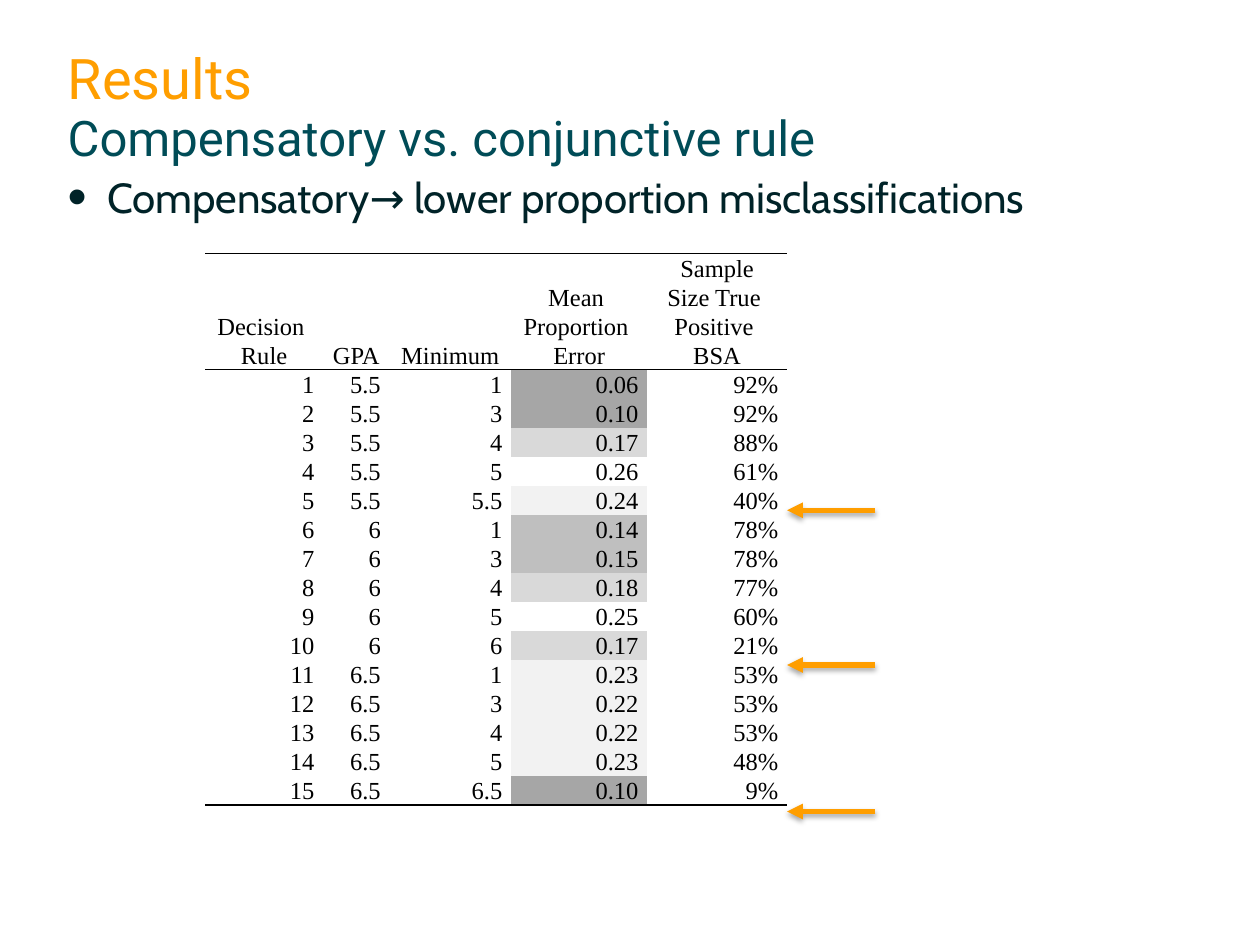
from lxml.etree import SubElement
from pptx import Presentation
from pptx.dml.color import RGBColor
from pptx.enum.shapes import MSO_CONNECTOR
from pptx.enum.text import MSO_ANCHOR, MSO_AUTO_SIZE, PP_ALIGN
from pptx.oxml import parse_xml
from pptx.oxml.ns import nsdecls, qn
from pptx.util import Pt


def rgb(color):
    return RGBColor.from_string(color)


def add_text(p, text, font="Times New Roman", size=14, color="000000",
             align=None, spacing=None):
    p.alignment = align
    p.line_spacing = spacing
    p.space_before = Pt(0)
    r = p.add_run()
    r.text = text
    r.font.name = font
    r.font.size = Pt(size)
    r.font.color.rgb = rgb(color)


prs = Presentation()
prs.slide_width, prs.slide_height = Pt(720), Pt(540)
s = prs.slides.add_slide(prs.slide_layouts[1])
title, body = s.placeholders

# Placeholder frames
for sp, top, height in ((title, 31, 65.5), (body, 102, 368.6)):
    sp.left, sp.top, sp.width, sp.height = Pt(38.7), Pt(top), Pt(643.7), Pt(height)
    tf = sp.text_frame
    tf.word_wrap = True
    tf.auto_size = MSO_AUTO_SIZE.NONE
    tf.vertical_anchor = MSO_ANCHOR.TOP
    tf.margin_left = tf.margin_top = tf.margin_right = tf.margin_bottom = 0

# Title and subtitle
p = title.text_frame.paragraphs[0]
title_format = dict(font="Roboto", align=PP_ALIGN.LEFT, spacing=Pt(32))
add_text(p, "Results", size=32, color="FF9E00", **title_format)
p.add_line_break()
add_text(p, "Compensatory vs. conjunctive rule", size=28, color="004C57", **title_format)

# Bullet
p = body.text_frame.paragraphs[0]
pPr = p._p.get_or_add_pPr()
pPr.set("marL", str(Pt(22.5)))
pPr.set("indent", str(-Pt(22.5)))
SubElement(pPr, qn("a:buSzPct"), val="130000")
SubElement(pPr, qn("a:buFont"), typeface="Arial")
SubElement(pPr, qn("a:buChar"), char="•")
add_text(p, "Compensatory→ lower proportion misclassifications", font="Cabin",
         size=24, color="002328", align=PP_ALIGN.LEFT, spacing=Pt(25))

# Results table
header = ["Decision \nRule", "GPA", "Minimum", "Mean \nProportion \nError",
          "Sample\nSize True \nPositive \nBSA"]
results = [
    ("5.5", "1", "0.06", "92%"), ("5.5", "3", "0.10", "92%"),
    ("5.5", "4", "0.17", "88%"), ("5.5", "5", "0.26", "61%"),
    ("5.5", "5.5", "0.24", "40%"), ("6", "1", "0.14", "78%"),
    ("6", "3", "0.15", "78%"), ("6", "4", "0.18", "77%"),
    ("6", "5", "0.25", "60%"), ("6", "6", "0.17", "21%"),
    ("6.5", "1", "0.23", "53%"), ("6.5", "3", "0.22", "53%"),
    ("6.5", "4", "0.22", "53%"), ("6.5", "5", "0.23", "48%"),
    ("6.5", "6.5", "0.10", "9%"),
]
rows = [header] + [(str(n), *row) for n, row in enumerate(results, 1)]
last = len(rows) - 1
shades = ((0.10, "A6A6A6"), (0.15, "BFBFBF"), (0.18, "D9D9D9"), (0.24, "F2F2F2"))
ERROR, SAMPLE = 3, 4
widths = (67.4, 38, 69.5, 77.8, 79.9)

frame = s.shapes.add_table(len(rows), len(widths), Pt(117.2), Pt(145),
                           Pt(sum(widths)), Pt(16 * len(rows)))
table = frame.table
table.first_row = table.horz_banding = False
for col, width in zip(table.columns, widths):
    col.width = Pt(width)

for i, row in enumerate(rows):
    table.rows[i].height = Pt(16)
    for j, text in enumerate(row):
        cell = table.cell(i, j)
        cell.margin_left = cell.margin_right = Pt(5)
        cell.margin_top = cell.margin_bottom = 0
        centred = i > 0 and j >= ERROR
        cell.vertical_anchor = MSO_ANCHOR.MIDDLE if centred else MSO_ANCHOR.BOTTOM

        # Rules above and below the header and below the last row
        ruled = {"lnT": i in (0, 1), "lnB": i in (0, last)}
        tcPr = cell._tc.get_or_add_tcPr()
        for side in ("lnL", "lnR", "lnT", "lnB"):
            ln = SubElement(tcPr, qn(f"a:{side}"), w=str(Pt(1)))
            if ruled.get(side):
                fill = SubElement(ln, qn("a:solidFill"))
                SubElement(fill, qn("a:srgbClr"), val="000000")
            else:
                SubElement(ln, qn("a:noFill"))

        # Darker shade for a smaller error
        shade = None
        if i and j == ERROR:
            shade = next((c for limit, c in shades if float(text) <= limit), None)
        elif i and j == SAMPLE:
            shade = "FFFFFF"
        if shade:
            cell.fill.solid()
            cell.fill.fore_color.rgb = rgb(shade)
        else:
            cell.fill.background()

        tf = cell.text_frame
        for k, line in enumerate(text.split("\n")):
            p = tf.add_paragraph() if k else tf.paragraphs[0]
            add_text(p, line, align=PP_ALIGN.RIGHT if i else PP_ALIGN.CENTER, spacing=1.07)

# Arrows pointing at the table
for y in (291.6, 380, 463.7):
    arrow = s.shapes.add_connector(MSO_CONNECTOR.STRAIGHT, Pt(500.2), Pt(y), Pt(449.8), Pt(y))
    arrow.line.color.rgb = rgb("FF9E00")
    arrow.line.width = Pt(3)
    SubElement(arrow.line._get_or_add_ln(), qn("a:tailEnd"), type="triangle")
    arrow._element.spPr.append(parse_xml(
        f'<a:effectLst {nsdecls("a")}>'
        f'<a:outerShdw blurRad="{Pt(3.1)}" dist="{Pt(1.8)}" dir="5400000" rotWithShape="0">'
        '<a:srgbClr val="000000"><a:alpha val="35000"/></a:srgbClr>'
        '</a:outerShdw></a:effectLst>'))

prs.save("out.pptx")
